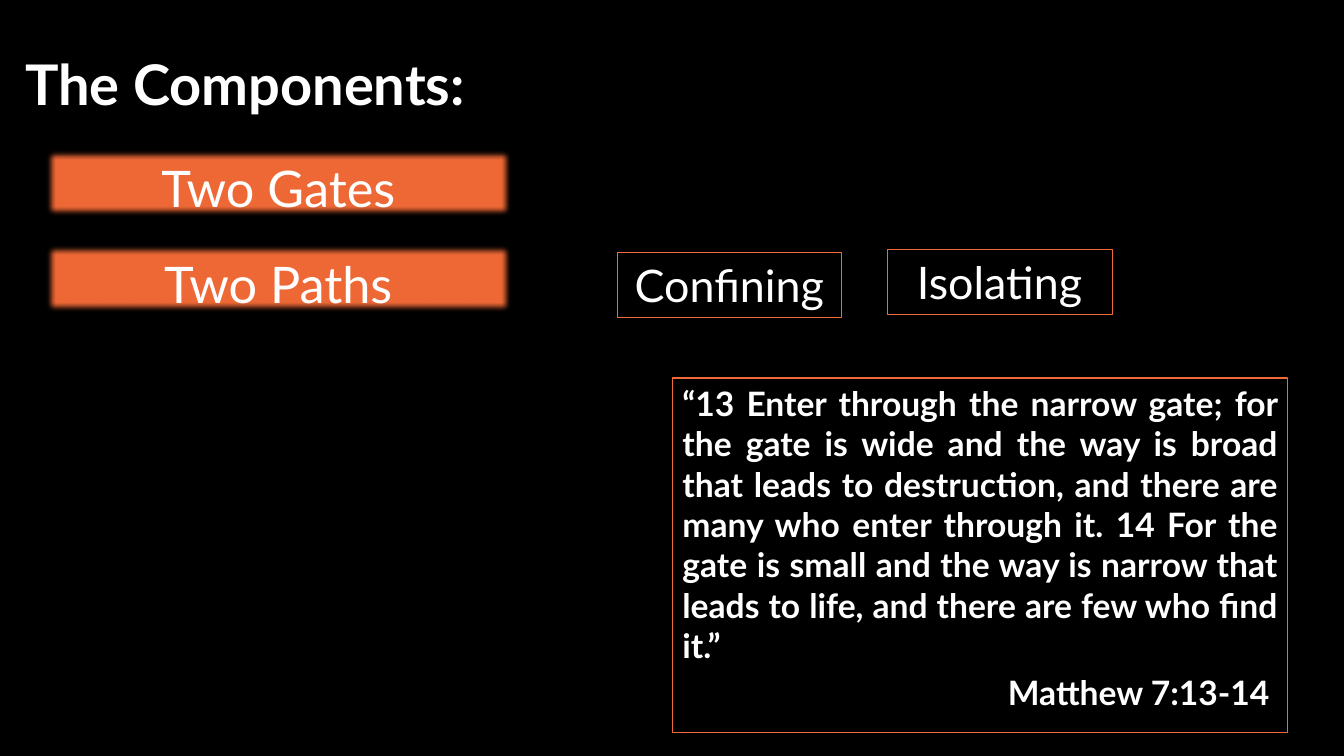
from lxml import etree
from pptx import Presentation
from pptx.dml.color import RGBColor
from pptx.enum.shapes import MSO_SHAPE
from pptx.enum.text import MSO_ANCHOR, PP_ALIGN
from pptx.oxml.ns import qn
from pptx.util import Inches, Pt

RECT = MSO_SHAPE.RECTANGLE
TOP = MSO_ANCHOR.TOP
LEFT, CENTER, RIGHT, JUSTIFY = PP_ALIGN.LEFT, PP_ALIGN.CENTER, PP_ALIGN.RIGHT, PP_ALIGN.JUSTIFY

FONT = "Lato"
COLORS = {"background": "000000", "accent": "F06A37", "text": "FFFFFF"}
VERSE = (
    "“13 Enter through the narrow gate; for the gate is wide and the way is broad "
    "that leads to destruction, and there are many who enter through it. 14 For the "
    "gate is small and the way is narrow that leads to life, and there are few who find it.”"
)


def color(name):
    return RGBColor.from_string(COLORS[name])


def write(tf, lines, size, bold=False):
    tf.word_wrap = True
    tf.vertical_anchor = TOP
    for i, (text, align) in enumerate(lines):
        p = tf.paragraphs[0] if i == 0 else tf.add_paragraph()
        p.text = text
        p.alignment = align
        p.font.name = FONT
        p.font.size = Pt(size)
        p.font.bold = bold
        p.font.color.rgb = color("text")
        if i:
            p.space_before = Pt(0.2 * size)


def add_rect(s, box):
    sp = s.shapes.add_shape(RECT, *map(Inches, box))
    sp.shadow.inherit = False
    return sp


def add_title(s, box, text):
    sp = s.shapes.add_textbox(*map(Inches, box))
    write(sp.text_frame, [(text, LEFT)], 40, bold=True)


def add_bar(s, box, text):
    sp = add_rect(s, box)
    sp.fill.solid()
    sp.fill.fore_color.rgb = color("accent")
    sp.line.fill.background()
    effects = sp._element.spPr.find(qn("a:effectLst"))
    etree.SubElement(effects, qn("a:softEdge"), rad=str(Pt(5)))
    tf = sp.text_frame
    tf.margin_left = tf.margin_right = tf.margin_top = Inches(0.1)
    tf.margin_bottom = 0
    write(tf, [(text, CENTER)], 36)


def add_framed(s, box, lines, size, bold=False):
    sp = add_rect(s, box)
    sp.fill.background()
    sp.line.color.rgb = color("accent")
    sp.line.width = Pt(0.75)
    write(sp.text_frame, lines, size, bold)


def main():
    prs = Presentation()
    prs.slide_width, prs.slide_height = Inches(13.33), Inches(7.5)
    s = prs.slides.add_slide(prs.slide_layouts[6])
    s.background.fill.solid()
    s.background.fill.fore_color.rgb = color("background")

    for i, text in enumerate(("Two Gates", "Two Paths")):
        add_bar(s, (0.43, 1.46 + 0.95 * i, 4.66, 0.71), text)
    add_title(s, (0.15, 0.44, 5.79, 0.77), "The Components:")
    add_framed(s, (6.67, 3.75, 6.1, 3.52),
               [(VERSE, JUSTIFY), ("Matthew 7:13-14 ", RIGHT)], 24, bold=True)
    for left, top, text in ((8.8, 2.48, "Isolating"), (6.12, 2.51, "Confining")):
        add_framed(s, (left, top, 2.23, 0.64), [(text, CENTER)], 32)

    prs.save("out.pptx")


if __name__ == "__main__":
    main()
